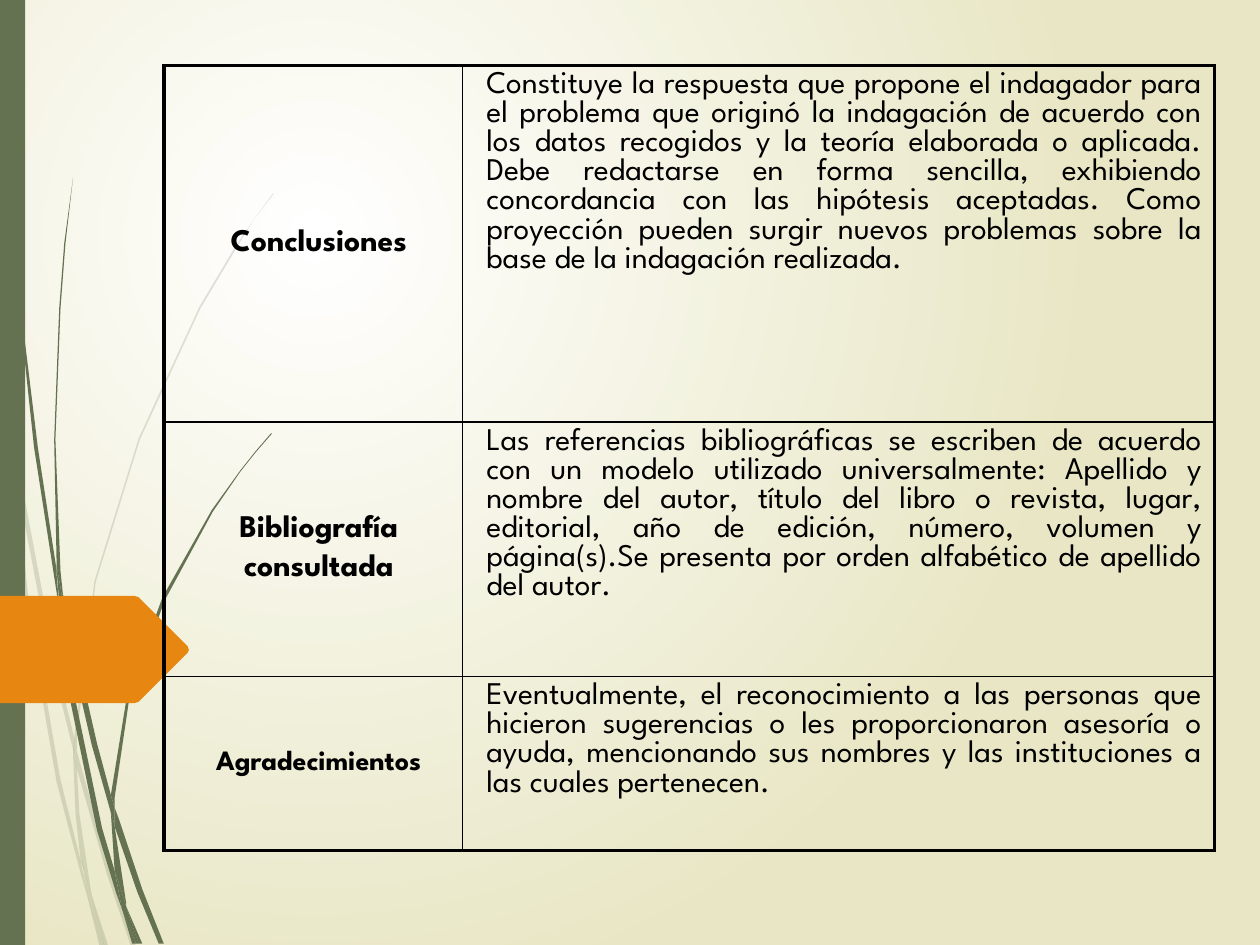
from lxml.etree import SubElement
from pptx import Presentation
from pptx.dml.color import RGBColor
from pptx.enum.shapes import MSO_SHAPE
from pptx.enum.text import MSO_ANCHOR, PP_ALIGN
from pptx.oxml.ns import qn
from pptx.util import Inches, Pt

BLACK = RGBColor(0, 0, 0)
WHITE = RGBColor(0xFF, 0xFF, 0xFF)
CREAM = RGBColor(0xE8, 0xE6, 0xC4)
GREEN = RGBColor(0x64, 0x72, 0x52)
ORANGE = RGBColor(0xE7, 0x87, 0x12)
FONT = "League Spartan"

PALE_BLADES = [
    [(0.08, 3.5), (0.06, 3.22), (0, 2.82), (0, 2.99), (0.07, 3.44)],
    [(0.4, 5.22), (0.59, 5.99), (0.59, 5.86), (0.43, 5.2), (0.1, 3.45), (0.12, 3.76)],
    [(0.64, 6.07), (0.61, 5.96), (0.61, 6.1), (0.85, 6.94), (1.04, 7.51), (1.08, 7.51),
     (0.88, 6.92)],
    [(0.83, 7.51), (0.86, 7.51), (0.73, 7.11)],
    [(0.64, 6.83), (0.48, 6.19), (0.22, 4.69), (0.12, 3.76), (0.08, 3.5), (0.19, 4.7),
     (0.45, 6.21), (0.64, 6.93), (0.7, 7.14), (0.69, 7.07)],
    [(0.58, 5.99), (0.6, 6.46), (0.64, 6.83), (0.67, 6.92), (0.73, 7.11), (0.72, 7.06),
     (0.63, 6.46), (0.61, 6.1), (0.61, 6.08)],
    [(0.61, 5.84), (0.76, 4.62), (1.11, 3.49), (1.59, 2.45), (1.87, 1.98), (2.01, 1.75),
     (2.17, 1.54), (2.17, 1.53), (2.01, 1.75), (1.86, 1.97), (1.58, 2.44), (1.1, 3.48),
     (0.75, 4.61), (0.59, 5.84), (0.59, 5.86), (0.61, 5.96)],
    [(0.7, 7.14), (0.79, 7.51), (0.82, 7.51)],
    [(0.61, 6.08), (0.61, 6.1), (0.61, 5.96), (0.59, 5.86), (0.58, 5.99)],
    [(0.67, 6.92), (0.65, 6.83), (0.69, 7.07), (0.7, 7.14), (0.82, 7.51), (0.83, 7.51),
     (0.73, 7.11)],
]
DARK_BLADES = [
    [(0.05, 1.1), (0.14, 2.33), (0.27, 3.55), (0.46, 4.77), (0.47, 4.81), (0.45, 4.57),
     (0.45, 4.53), (0.3, 3.55), (0.15, 2.32), (0.06, 1.09), (0.04, 0.48), (0.03, 0),
     (0.02, 0), (0.03, 0.48)],
    [(0.73, 5.92), (0.88, 6.45), (0.88, 6.33), (0.88, 6.31), (0.77, 5.9), (0.5, 4.72),
     (0.53, 5.05)],
    [(0.94, 6.49), (0.91, 6.41), (0.91, 6.56), (1.09, 7.08), (1.26, 7.49), (1.3, 7.49),
     (1.13, 7.06)],
    [(0.91, 6.91), (0.81, 6.57), (0.6, 5.56), (0.53, 5.05), (0.47, 4.77), (0.56, 5.57),
     (0.77, 6.59), (0.92, 7.08), (0.97, 7.22), (0.96, 7.17)],
    [(0.5, 4.72), (0.48, 4.53), (0.44, 3.49), (0.48, 2.45), (0.52, 1.93), (0.58, 1.41),
     (0.51, 1.93), (0.47, 2.45), (0.43, 3.49), (0.45, 4.49), (0.49, 4.72)],
    [(1.1, 7.49), (1.13, 7.49), (1, 7.19)],
    [(0.47, 4.77), (0.53, 5.05), (0.5, 4.72), (0.49, 4.72), (0.45, 4.49), (0.45, 4.53)],
    [(0.91, 6.33), (1.03, 5.52), (1.31, 4.76), (1.69, 4.06), (1.91, 3.74), (2.03, 3.59),
     (2.16, 3.44), (2.15, 3.44), (2.03, 3.58), (1.91, 3.73), (1.68, 4.05), (1.29, 4.74),
     (1.01, 5.51), (0.88, 6.31), (0.91, 6.41)],
    [(0.97, 7.22), (1.05, 7.49), (1.08, 7.49)],
    [(0.88, 6.45), (0.91, 6.91), (0.96, 7.06), (1, 7.19), (1, 7.16), (0.91, 6.56),
     (0.9, 6.51)],
    [(0.88, 6.45), (0.9, 6.51), (0.91, 6.56), (0.91, 6.41), (0.88, 6.31), (0.88, 6.33)],
    [(0.96, 7.06), (0.91, 6.91), (0.96, 7.17), (0.97, 7.22), (1.08, 7.49), (1.1, 7.49),
     (1, 7.19)],
]
TAG = [(1.07, 5.58), (1.1, 5.57), (1.49, 5.18), (1.5, 5.16), (1.49, 5.13), (1.1, 4.74),
       (1.07, 4.73), (-0.03, 4.73), (-0.03, 5.58)]

COLUMNS = [2.37, 5.97]
ROWS = [
    (2.83, 18, ["Conclusiones"],
     "Constituye la respuesta que propone el indagador para el problema que originó la "
     "indagación de acuerdo con los datos recogidos y la teoría elaborada o aplicada. Debe "
     "redactarse en forma sencilla, exhibiendo concordancia con las hipótesis aceptadas. Como "
     "proyección pueden surgir nuevos problemas sobre la base de la indagación realizada."),
    (2.02, 18, ["Bibliografía", "consultada"],
     "Las referencias bibliográficas se escriben de acuerdo con un modelo utilizado "
     "universalmente: Apellido y nombre del autor, título del libro o revista, lugar, editorial, "
     "año de edición, número, volumen y página(s).Se presenta por orden alfabético de apellido "
     "del autor."),
    (1.38, 16, ["Agradecimientos"],
     "Eventualmente, el reconocimiento a las personas que hicieron sugerencias o les "
     "proporcionaron asesoría o ayuda, mencionando sus nombres y las instituciones a las cuales "
     "pertenecen."),
]


def set_values(target, values):
    for name, value in values.items():
        setattr(target, name, value)


def paint_background(page):
    fill = page.background.fill
    fill.gradient()
    for stop, color, position in zip(fill.gradient_stops, (WHITE, CREAM), (0, 1)):
        stop.color.rgb = color
        stop.position = position
    gradient = page.element.find(".//" + qn("a:gradFill"))
    gradient.remove(gradient.find(qn("a:lin")))
    radial = SubElement(gradient, qn("a:path"), {"path": "circle"})
    SubElement(radial, qn("a:fillToRect"),
               {"l": "50000", "t": "50000", "r": "100000", "b": "100000"})


def paint(shape, color, opacity=100):
    shape.shadow.inherit = False
    shape.fill.solid()
    shape.fill.fore_color.rgb = color
    shape.line.fill.background()
    if opacity < 100:
        tone = shape.fill._xPr.find(".//" + qn("a:srgbClr"))
        SubElement(tone, qn("a:alpha"), {"val": str(opacity * 1000)})


def add_outline(shapes, points, color, opacity=100):
    first, *others = [(Inches(x), Inches(y)) for x, y in points]
    builder = shapes.build_freeform(*first)
    builder.add_line_segments(others, close=True)
    paint(builder.convert_to_shape(), color, opacity)


def add_grass(page, blades, opacity):
    group = page.shapes.add_group_shape()
    for blade in blades:
        add_outline(group.shapes, blade, GREEN, opacity)


def add_side_bar(page):
    bar = page.shapes.add_shape(MSO_SHAPE.RECTANGLE, 0, 0, Inches(0.2), Inches(7.5))
    paint(bar, GREEN)


def add_border(cell, side, points):
    properties = cell._tc.get_or_add_tcPr()
    line = SubElement(properties, qn("a:ln" + side), {"w": str(Pt(points))})
    fill = SubElement(line, qn("a:solidFill"))
    SubElement(fill, qn("a:srgbClr"), {"val": str(BLACK)})


def fill_cell(cell, lines, anchor, alignment, font):
    cell.vertical_anchor = anchor
    frame = cell.text_frame
    for index, text in enumerate(lines):
        para = frame.add_paragraph() if index else frame.paragraphs[0]
        set_values(para, {"alignment": alignment, "space_before": Pt(6)})
        para._p.get_or_add_pPr().set("marL", str(Inches(0.09)))
        span = para.add_run()
        span.text = text
        set_values(span.font, {"name": FONT, **font})
        span.font.color.rgb = BLACK


def add_report_table(page):
    height = sum(row[0] for row in ROWS)
    frame = page.shapes.add_table(len(ROWS), len(COLUMNS), Inches(1.3), Inches(0.52),
                                  Inches(sum(COLUMNS)), Inches(height))
    table = frame.table
    set_values(table, {"first_row": False, "horz_banding": False})
    for column, width in zip(table.columns, COLUMNS):
        column.width = Inches(width)
    for index, (row_height, size, heading, description) in enumerate(ROWS):
        table.rows[index].height = Inches(row_height)
        label, body = table.cell(index, 0), table.cell(index, 1)
        fill_cell(label, heading, MSO_ANCHOR.MIDDLE, PP_ALIGN.CENTER,
                  {"size": Pt(size), "bold": True})
        fill_cell(body, [description], MSO_ANCHOR.TOP, PP_ALIGN.JUSTIFY,
                  {"size": Pt(18), "bold": False})
        for cell in (label, body):
            outer = {"L": cell is label, "R": cell is body,
                     "T": index == 0, "B": index == len(ROWS) - 1}
            for side, is_outer in outer.items():
                add_border(cell, side, 2.25 if is_outer else 1)
            cell.fill.background()


def main():
    deck = Presentation()
    set_values(deck, {"slide_width": Inches(10), "slide_height": Inches(7.5)})
    page = deck.slides.add_slide(deck.slide_layouts[6])
    paint_background(page)
    add_grass(page, PALE_BLADES, 20)
    add_grass(page, DARK_BLADES, 100)
    add_side_bar(page)
    add_outline(page.shapes, TAG, ORANGE)
    add_report_table(page)
    deck.save("out.pptx")


if __name__ == "__main__":
    main()
